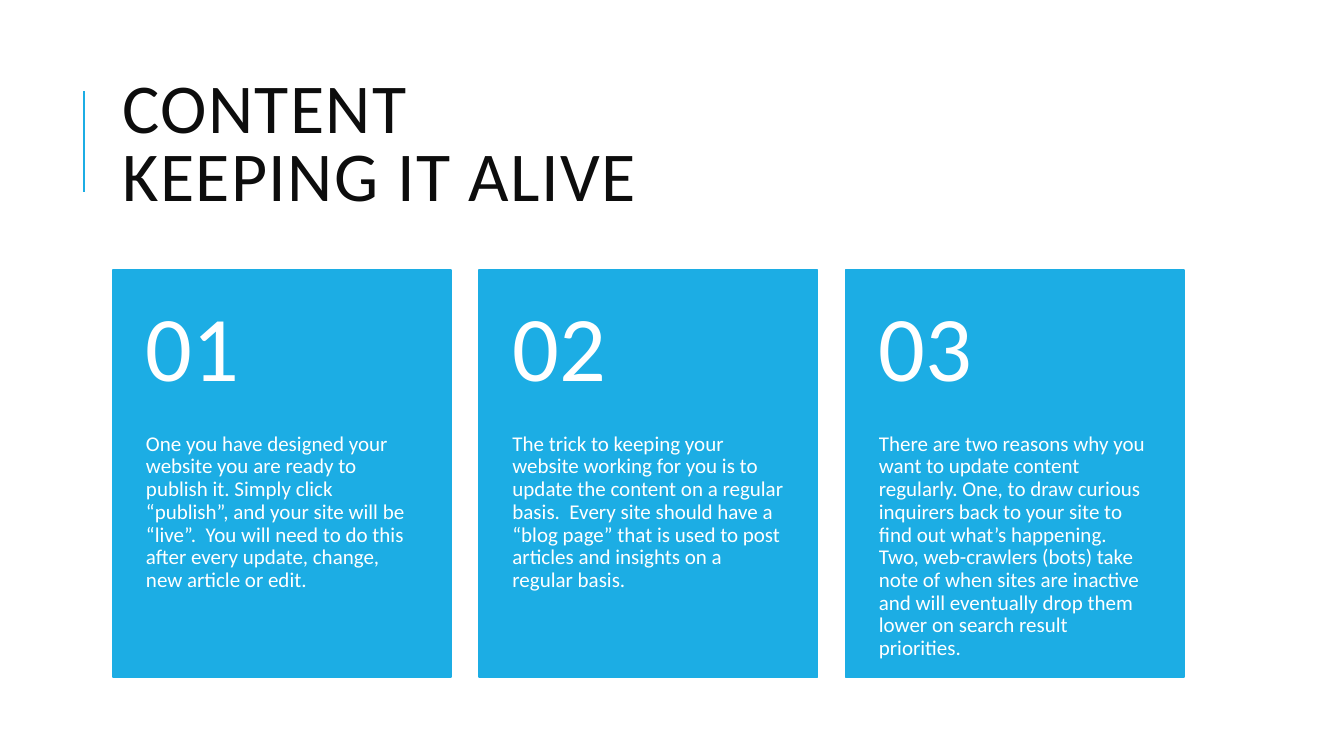
from dataclasses import dataclass

from lxml import etree
from pptx import Presentation
from pptx.dml.color import RGBColor
from pptx.enum.shapes import MSO_CONNECTOR, MSO_SHAPE
from pptx.enum.text import MSO_ANCHOR, MSO_AUTO_SIZE, PP_ALIGN
from pptx.oxml.ns import qn
from pptx.util import Cm, Pt

STRAIGHT = MSO_CONNECTOR.STRAIGHT
RECTANGLE = MSO_SHAPE.RECTANGLE
TOP, MIDDLE = MSO_ANCHOR.TOP, MSO_ANCHOR.MIDDLE
LEFT = PP_ALIGN.LEFT
NO_AUTOFIT = MSO_AUTO_SIZE.NONE
TITLE_ONLY = 5

TITLE_LINES = ["CONTENT", "KEEPING IT ALIVE"]
STEPS = [
    ("01", "One you have designed your website you are ready to publish it. "
           "Simply click “publish”, and your site will be “live”.  You will need "
           "to do this after every update, change, new article or edit."),
    ("02", "The trick to keeping your website working for you is to update the "
           "content on a regular basis.  Every site should have a “blog page” "
           "that is used to post articles and insights on a regular basis."),
    ("03", "There are two reasons why you want to update content regularly. One, "
           "to draw curious inquirers back to your site to find out what’s "
           "happening. Two, web-crawlers (bots) take note of when sites are "
           "inactive and will eventually drop them lower on search result "
           "priorities."),
]


@dataclass(frozen=True)
class Theme:
    font: str = "Calibri"
    accent: RGBColor = RGBColor(0x1C, 0xAD, 0xE4)
    ink: RGBColor = RGBColor(0x0D, 0x0D, 0x0D)
    paper: RGBColor = RGBColor(0xFF, 0xFF, 0xFF)
    title_size: int = 50
    number_size: int = 66
    body_size: int = 15
    rule_width: float = 1.5
    border_width: float = 1.25


THEME = Theme()

# Layout in centimetres
CONTENT_LEFT, CONTENT_WIDTH = 2.84, 27
TITLE_TOP, TITLE_HEIGHT = 1.63, 4.17
RULE_X, RULE_TOP, RULE_BOTTOM = 2.12, 2.29, 4.83
CARD_TOP, CARD_WIDTH, CARD_HEIGHT = 6.81, 8.53, 10.26
CARD_PITCH = (CONTENT_WIDTH - CARD_WIDTH) / (len(STEPS) - 1)
NUMBER_HEIGHT = CARD_HEIGHT * 0.4
NUMBER_INSETS = (0.84, 0.46, 0.84, 0.46)
BODY_INSETS = (0.84, 0, 0.84, 0.91)


def write_text(holder, text, *, size, color, anchor=TOP, line_spacing=0.9,
               insets=(0.25, 0.13, 0.25, 0.13), tracking=0):
    """Fill a text holder; insets run left, top, right, bottom in cm, tracking is in points."""
    frame = holder.text_frame
    frame.word_wrap = True
    frame.auto_size = NO_AUTOFIT
    frame.vertical_anchor = anchor
    (frame.margin_left, frame.margin_top,
     frame.margin_right, frame.margin_bottom) = map(Cm, insets)
    paragraph = frame.paragraphs[0]
    paragraph.text = text
    paragraph.alignment = LEFT
    paragraph.line_spacing = line_spacing
    paragraph.space_before = Pt(0)
    for run in paragraph.runs:
        run.font.name = THEME.font
        run.font.size = Pt(size)
        run.font.color.rgb = color
        if tracking:
            run.font._element.set("spc", str(tracking * 100))


def add_title(slide):
    title = slide.shapes.title
    title.left, title.top = Cm(CONTENT_LEFT), Cm(TITLE_TOP)
    title.width, title.height = Cm(CONTENT_WIDTH), Cm(TITLE_HEIGHT)
    write_text(title, "\v".join(TITLE_LINES), size=THEME.title_size,
               color=THEME.ink, anchor=MIDDLE, line_spacing=0.8, tracking=1)


def add_title_rule(slide):
    rule = slide.shapes.add_connector(
        STRAIGHT, Cm(RULE_X), Cm(RULE_BOTTOM), Cm(RULE_X), Cm(RULE_TOP))
    rule.line.color.rgb = THEME.accent
    rule.line.width = Pt(THEME.rule_width)
    etree.SubElement(rule._element.spPr, qn("a:effectLst"))


def add_card(slide, left, number, body):
    card = slide.shapes.add_shape(
        RECTANGLE, Cm(left), Cm(CARD_TOP), Cm(CARD_WIDTH), Cm(CARD_HEIGHT))
    card.shadow.inherit = False
    card.fill.solid()
    card.fill.fore_color.rgb = THEME.accent
    card.line.color.rgb = THEME.accent
    card.line.width = Pt(THEME.border_width)

    body_box = slide.shapes.add_textbox(
        Cm(left), Cm(CARD_TOP + NUMBER_HEIGHT),
        Cm(CARD_WIDTH), Cm(CARD_HEIGHT - NUMBER_HEIGHT))
    write_text(body_box, body, size=THEME.body_size, color=THEME.paper,
               insets=BODY_INSETS)

    number_box = slide.shapes.add_textbox(
        Cm(left), Cm(CARD_TOP), Cm(CARD_WIDTH), Cm(NUMBER_HEIGHT))
    write_text(number_box, number, size=THEME.number_size, color=THEME.paper,
               anchor=MIDDLE, insets=NUMBER_INSETS)


def main():
    deck = Presentation()
    deck.slide_width, deck.slide_height = Cm(33.87), Cm(19.05)
    slide = deck.slides.add_slide(deck.slide_layouts[TITLE_ONLY])
    add_title_rule(slide)
    add_title(slide)
    for index, (number, body) in enumerate(STEPS):
        add_card(slide, CONTENT_LEFT + index * CARD_PITCH, number, body)
    deck.save("out.pptx")


if __name__ == "__main__":
    main()
